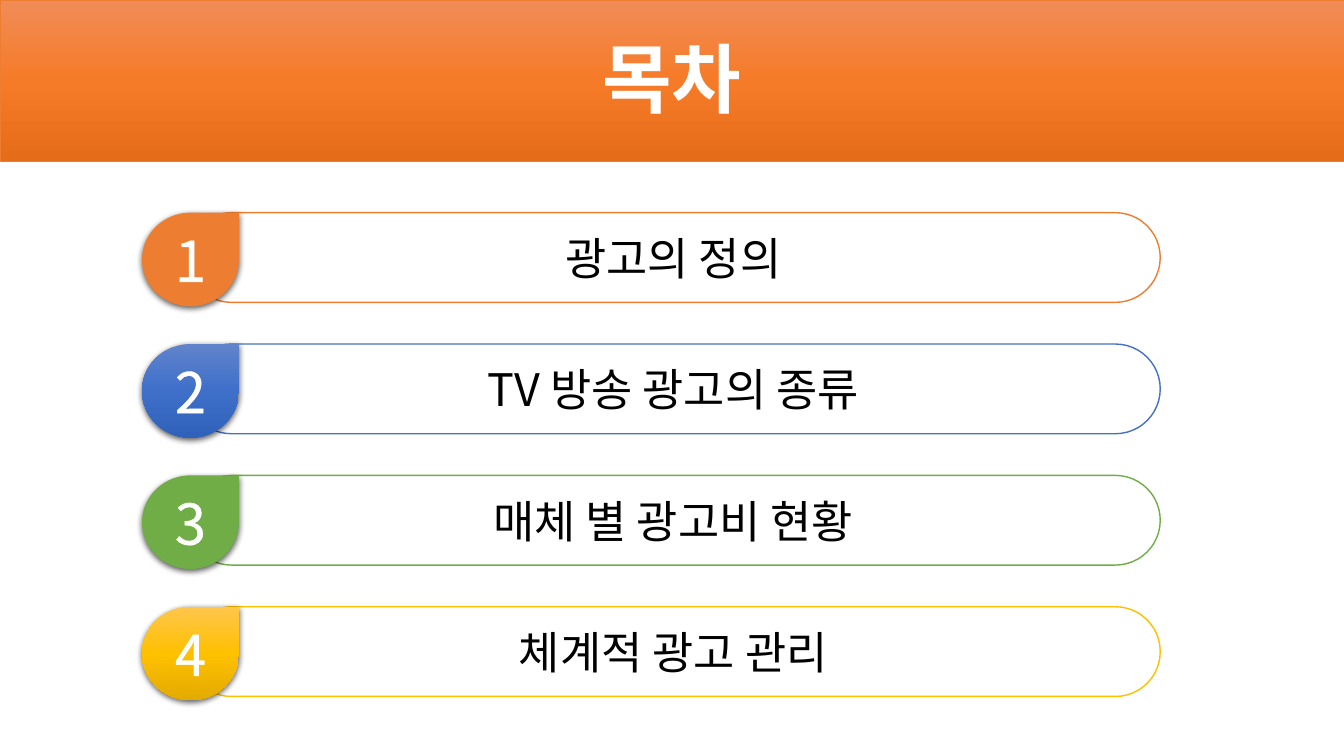
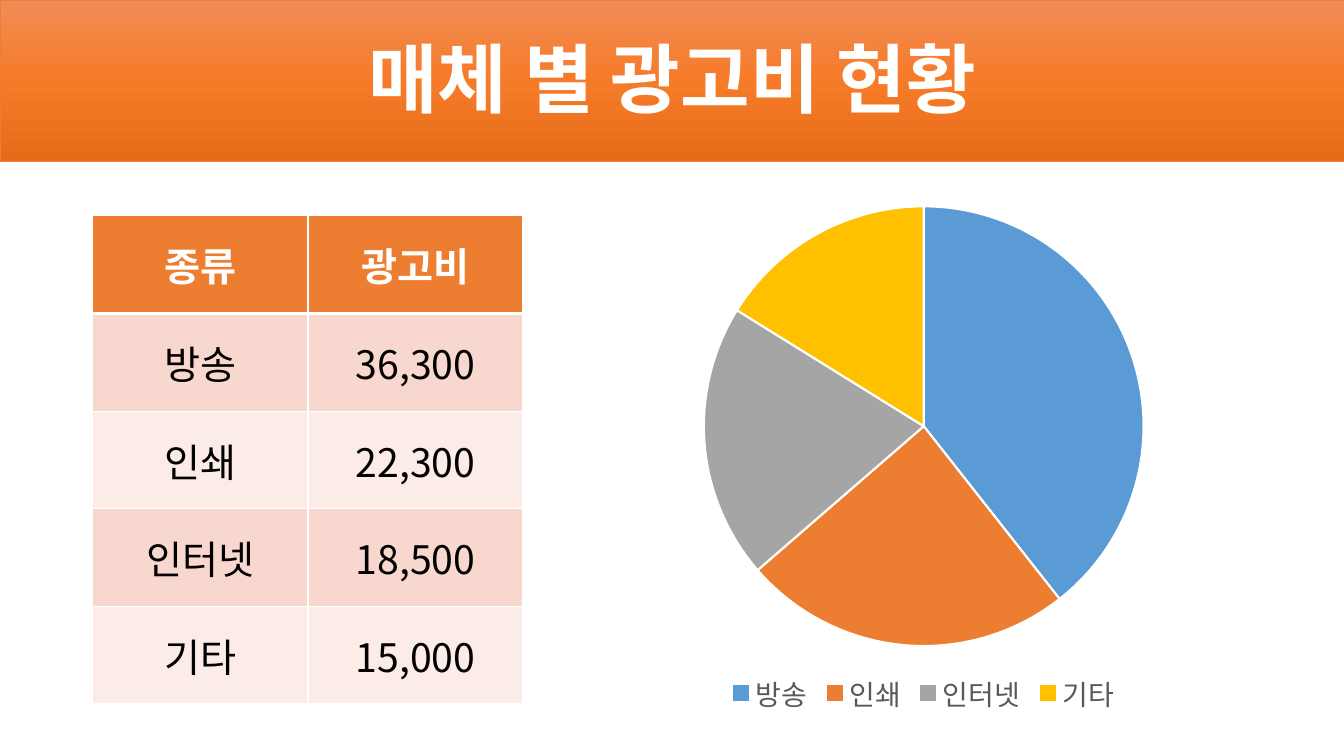
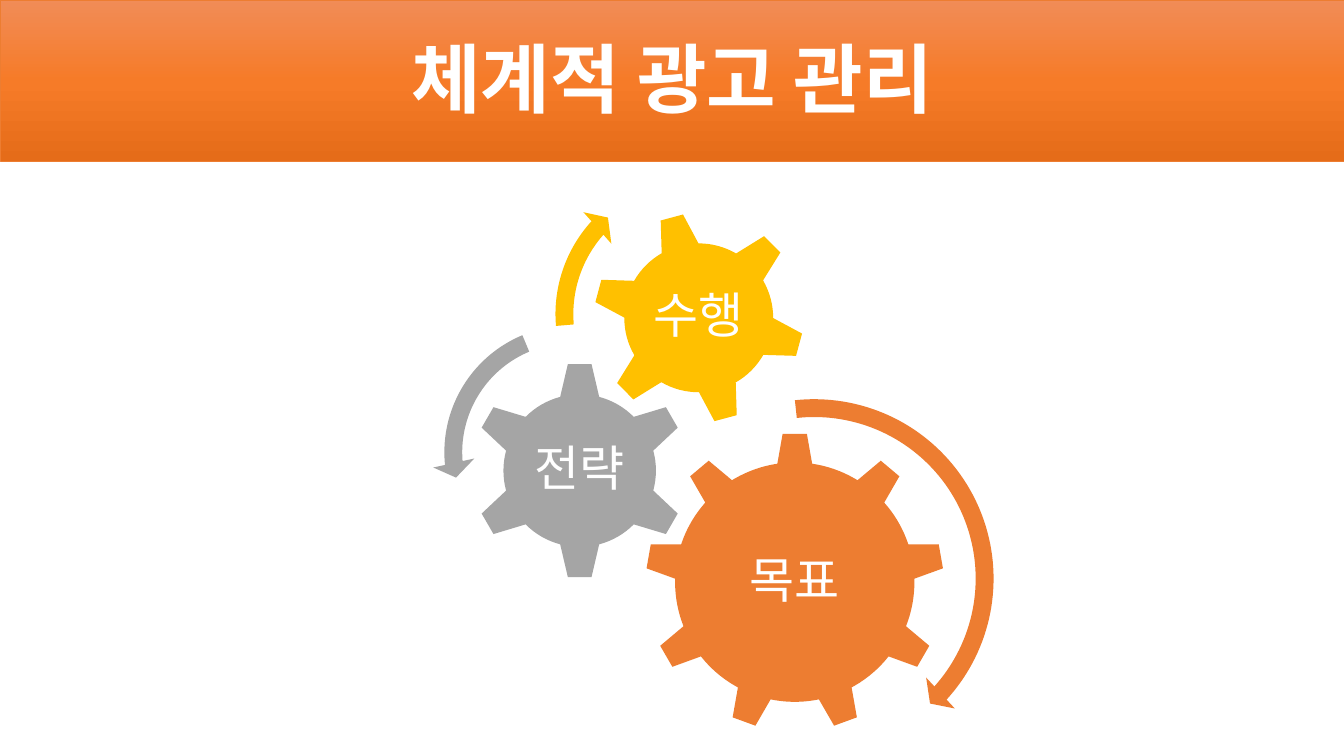
from copy import deepcopy

from lxml.etree import SubElement
from pptx import Presentation
from pptx.chart.data import CategoryChartData
from pptx.dml.color import RGBColor
from pptx.enum.chart import XL_CHART_TYPE, XL_LEGEND_POSITION
from pptx.enum.shapes import MSO_SHAPE
from pptx.enum.text import MSO_ANCHOR, PP_ALIGN
from pptx.oxml.ns import qn
from pptx.util import Cm, Pt

FONT = "Noto Sans CJK KR"
WHITE = RGBColor(0xFF, 0xFF, 0xFF)
BLACK = RGBColor(0, 0, 0)
DARK_GRAY = RGBColor(0x59, 0x59, 0x59)
ORANGE = RGBColor(0xED, 0x7D, 0x31)
BLUE = RGBColor(0x44, 0x72, 0xC4)
SKY = RGBColor(0x5B, 0x9B, 0xD5)
GREEN = RGBColor(0x70, 0xAD, 0x47)
GOLD = RGBColor(0xFF, 0xC0, 0x00)
GRAY = RGBColor(0xA5, 0xA5, 0xA5)
ROW_DARK = RGBColor(0xF8, 0xD7, 0xCE)
ROW_LIGHT = RGBColor(0xFC, 0xEC, 0xE8)
ORANGE_GRADIENT = [RGBColor(0xF1, 0x8C, 0x57), RGBColor(0xF6, 0x7B, 0x28), RGBColor(0xE5, 0x6C, 0x19)]
BLUE_GRADIENT = [RGBColor(0x61, 0x83, 0xCB), RGBColor(0x3E, 0x70, 0xCA), RGBColor(0x30, 0x62, 0xBB)]
GOLD_GRADIENT = [RGBColor(0xFF, 0xC6, 0x4B), RGBColor(0xFF, 0xC0, 0x00), RGBColor(0xE3, 0xAB, 0x00)]

SLIDE_W, SLIDE_H = 33.87, 19.05


def set_font(font, size, color, bold=False):
    font.size = Pt(size)
    font.bold = bold
    font.color.rgb = color
    font.name = FONT
    SubElement(font._element, qn("a:ea"), typeface=FONT)


def write(tf, text, size, color, bold=False, spacing=None):
    tf.text = text
    tf.word_wrap = True
    tf.vertical_anchor = MSO_ANCHOR.MIDDLE
    p = tf.paragraphs[0]
    p.alignment = PP_ALIGN.CENTER
    if spacing:
        p.line_spacing = spacing
    set_font(p.runs[0].font, size, color, bold)
    return p.runs[0]


def fill_gradient(sp, colors):
    sp.fill.gradient()
    sp.fill.gradient_angle = 270
    stops = sp._element.spPr.find(".//" + qn("a:gsLst"))
    stops.append(deepcopy(stops[0]))
    for stop, color, position in zip(sp.fill.gradient_stops, colors, (0, 0.5, 1)):
        stop.color.rgb = color
        stop.position = position


def add_shape(s, kind, x, y, w, h, fill, line=None, line_width=1):
    sp = s.shapes.add_shape(kind, Cm(x), Cm(y), Cm(w), Cm(h))
    sp.shadow.inherit = False
    if isinstance(fill, list):
        fill_gradient(sp, fill)
    else:
        sp.fill.solid()
        sp.fill.fore_color.rgb = fill
    if line is None:
        sp.line.fill.background()
    else:
        sp.line.color.rgb = line
        sp.line.width = Pt(line_width)
    return sp


def add_centered(s, kind, center, size, fill):
    x, y = center
    return add_shape(s, kind, x - size / 2, y - size / 2, size, size, fill)


def add_titled_slide(prs, title):
    s = prs.slides.add_slide(prs.slide_layouts[6])
    add_shape(s, MSO_SHAPE.RECTANGLE, 0, 0, SLIDE_W, 4.07, ORANGE_GRADIENT, ORANGE, 0.5)
    box = s.shapes.add_textbox(Cm(2.33), Cm(0.25), Cm(29.21), Cm(3.68))
    write(box.text_frame, title, 54, WHITE, True, 0.9)
    return s


def add_drop_shadow(sp):
    effects = sp._element.spPr.find(qn("a:effectLst"))
    shadow = SubElement(effects, qn("a:outerShdw"), blurRad=str(Pt(4.5)), dist=str(Pt(1.5)),
                        dir="5400000", algn="ctr", rotWithShape="0")
    color = SubElement(shadow, qn("a:srgbClr"), val=str(BLACK))
    SubElement(color, qn("a:alpha"), val="63000")


def outline_text(r, color, width):
    r.font._element.insert(0, r.font._element.makeelement(qn("a:ln"), {"w": str(Pt(width))}))
    fill = SubElement(r.font._element[0], qn("a:solidFill"))
    SubElement(fill, qn("a:srgbClr"), val=str(color))


def add_agenda_item(s, number, text, color, drop_fill):
    y = 5.36 + 3.31 * (number - 1)
    bar = add_shape(s, MSO_SHAPE.ROUNDED_RECTANGLE, 4.7, y, 24.54, 2.26, WHITE, color)
    bar.adjustments[0] = 0.5
    write(bar.text_frame, text, 32, BLACK)
    drop = add_shape(s, MSO_SHAPE.TEAR, 3.58, y, 2.44, 2.36, drop_fill)
    add_drop_shadow(drop)
    outline_text(write(drop.text_frame, str(number), 40, WHITE), WHITE, 1.45)


def set_borders(cell, widths):
    tc_pr = cell._tc.get_or_add_tcPr()
    for side, width in zip("LRTB", widths):
        ln = SubElement(tc_pr, qn("a:ln" + side), w=str(Pt(width)))
        fill = SubElement(ln, qn("a:solidFill"))
        SubElement(fill, qn("a:srgbClr"), val=str(WHITE))


def add_cost_table(s, rows):
    frame = s.shapes.add_table(len(rows), len(rows[0]), Cm(2.34), Cm(5.44),
                               Cm(10.84), Cm(2.46 * len(rows)))
    for i, row in enumerate(rows):
        header = i == 0
        for j, text in enumerate(row):
            cell = frame.table.cell(i, j)
            set_borders(cell, (1, 1, 3 if i == 1 else 1, 3 if header else 1))
            cell.fill.solid()
            cell.fill.fore_color.rgb = ORANGE if header else ROW_DARK if i % 2 else ROW_LIGHT
            write(cell.text_frame, text, 28, WHITE if header else BLACK, header)
            cell.vertical_anchor = MSO_ANCHOR.MIDDLE


def add_share_pie(s, categories, values, colors):
    data = CategoryChartData()
    data.categories = categories
    data.add_series("Series 1", values)
    chart = s.shapes.add_chart(XL_CHART_TYPE.PIE, Cm(15.01), Cm(4.85), Cm(16.54), Cm(13.28), data).chart
    set_font(chart.font, 20, BLACK)
    chart.has_title = False
    chart.has_legend = True
    chart.legend.position = XL_LEGEND_POSITION.BOTTOM
    chart.legend.include_in_layout = False
    set_font(chart.legend.font, 20, DARK_GRAY)
    plot = chart.plots[0]
    plot.vary_by_categories = True
    for i, color in enumerate(colors):
        form = plot.series[0].points[i].format
        form.fill.solid()
        form.fill.fore_color.rgb = color
        form.line.color.rgb = WHITE
        form.line.width = Pt(1.5)


def add_gear(s, kind, text, center, size, color, rotation=0):
    gear = add_centered(s, kind, center, size, color)
    gear.rotation = rotation
    side = size * 0.55
    box = s.shapes.add_textbox(Cm(center[0] - side / 2), Cm(center[1] - side / 2), Cm(side), Cm(side))
    tf = box.text_frame
    tf.margin_left = tf.margin_right = tf.margin_top = tf.margin_bottom = Cm(0.13)
    write(tf, text, 35, WHITE, spacing=0.9)


def add_turn_arrow(s, kind, center, size, color, degrees):
    arrow = add_centered(s, kind, center, size, color)
    arrow.adjustments[0] = 0.45 / size
    for i, angle in enumerate(degrees, 1):
        arrow.adjustments[i] = angle * 0.6
    arrow.adjustments[4] = 0.53 / size


def build_agenda(prs):
    s = add_titled_slide(prs, "목차")
    items = [
        ("광고의 정의", ORANGE, ORANGE),
        ("TV 방송 광고의 종류", BLUE, BLUE_GRADIENT),
        ("매체 별 광고비 현황", GREEN, GREEN),
        ("체계적 광고 관리", GOLD, GOLD_GRADIENT),
    ]
    for number, item in enumerate(items, 1):
        add_agenda_item(s, number, *item)


def build_costs(prs):
    s = add_titled_slide(prs, "매체 별 광고비 현황")
    media = ["방송", "인쇄", "인터넷", "기타"]
    costs = ["36,300", "22,300", "18,500", "15,000"]
    add_cost_table(s, [("종류", "광고비"), *zip(media, costs)])
    add_share_pie(s, media, (39, 24, 20, 16), (SKY, ORANGE, GRAY, GOLD))


def build_management(prs):
    s = add_titled_slide(prs, "체계적 광고 관리")
    add_gear(s, MSO_SHAPE.GEAR_9, "목표", (20.03, 14.67), 7.54, ORANGE)
    add_gear(s, MSO_SHAPE.GEAR_6, "전략", (14.61, 11.86), 5.49, GRAY)
    add_gear(s, MSO_SHAPE.GEAR_6, "수행", (17.61, 8.01), 5.36, GOLD, 345)
    right, left = MSO_SHAPE.CIRCULAR_ARROW, MSO_SHAPE.LEFT_CIRCULAR_ARROW
    add_turn_arrow(s, right, (20.52, 14.58), 9.65, ORANGE, (4.98, 42.19, 263.82))
    add_turn_arrow(s, left, (14.4, 11.4), 7.01, GRAY, (7.17, 174.82, 247.3))
    add_turn_arrow(s, right, (17.48, 7.92), 7.57, GOLD, (6.57, 221.9, 175.14))


def main():
    prs = Presentation()
    prs.slide_width, prs.slide_height = Cm(SLIDE_W), Cm(SLIDE_H)
    build_agenda(prs)
    build_costs(prs)
    build_management(prs)
    prs.save("out.pptx")


if __name__ == "__main__":
    main()
